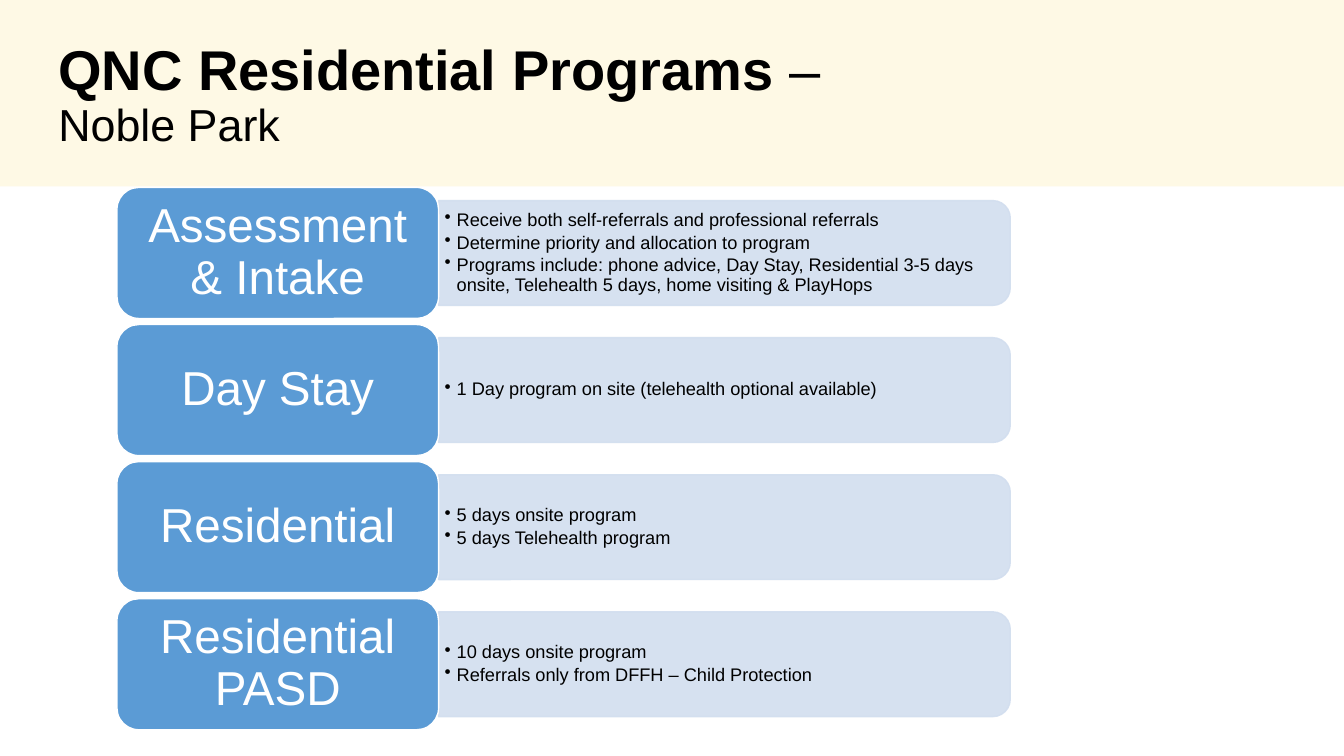
"""Build a slide listing the residential programs at Noble Park."""
from dataclasses import dataclass

from lxml import etree
from pptx import Presentation
from pptx.dml.color import RGBColor
from pptx.enum import shapes, text
from pptx.oxml import ns
from pptx.util import Inches, Pt

BLACK = RGBColor(0x00, 0x00, 0x00)
WHITE = RGBColor(0xFF, 0xFF, 0xFF)
CREAM = RGBColor(0xFE, 0xF9, 0xE5)
BLUE = RGBColor(0x5B, 0x9B, 0xD5)
PALE = RGBColor(0xD2, 0xDE, 0xEF)
FACE = "Arial"
TOP, PITCH = 1.86, 1.36
LEFT, TAB_W, TAB_H = 1.16, 3.19, 1.3
BAR_W, BAR_H = 5.67, 1.04


@dataclass
class Program:
    name: str
    notes: list[str]


PROGRAMS = [
    Program("Assessment & Intake", [
        "Receive both self-referrals and professional referrals",
        "Determine priority and allocation to program",
        "Programs include: phone advice, Day Stay, Residential 3-5 days "
        "onsite, Telehealth 5 days, home visiting & PlayHops",
    ]),
    Program("Day Stay", ["1 Day program on site (telehealth optional available)"]),
    Program("Residential", ["5 days onsite program", "5 days Telehealth program"]),
    Program("Residential PASD", [
        "10 days onsite program",
        "Referrals only from DFFH – Child Protection",
    ]),
]


def add_box(slide, kind, left: float, top: float, width: float, height: float,
            fill: RGBColor, line: RGBColor):
    box = slide.shapes.add_shape(
        kind, Inches(left), Inches(top), Inches(width), Inches(height))
    box.shadow.inherit = False
    box.fill.solid()
    box.fill.fore_color.rgb = fill
    box.line.color.rgb = line
    box.line.width = Pt(1)
    return box


def set_frame(frame, side: float, edge: float) -> None:
    frame.word_wrap = True
    frame.vertical_anchor = text.MSO_ANCHOR.MIDDLE
    frame.margin_left = frame.margin_right = Inches(side)
    frame.margin_top = frame.margin_bottom = Inches(edge)


def set_font(font, size: float, color: RGBColor) -> None:
    font.name = FACE
    font.size = Pt(size)
    font.color.rgb = color


def add_title(slide) -> None:
    box = slide.shapes.add_textbox(
        Inches(0.48), Inches(0.47), Inches(8.87), Inches(0.98))
    set_frame(box.text_frame, 0.1, 0.05)
    para = box.text_frame.paragraphs[0]
    para.line_spacing = 0.9
    set_font(para.font, 40, BLACK)
    lead = para.add_run()
    lead.text = "QNC Residential Programs "
    lead.font.bold = True
    para.add_run().text = "– "
    para.add_line_break()
    place = para.add_run()
    place.text = "Noble Park"
    place.font.size = Pt(32)


def add_bar(slide, mid: float) -> None:
    center = LEFT + TAB_W + BAR_W / 2
    bar = add_box(slide, shapes.MSO_SHAPE.ROUND_2_SAME_RECTANGLE,
                  center - BAR_H / 2, mid - BAR_W / 2, BAR_H, BAR_W, PALE, PALE)
    bar.rotation = 90
    for color in bar.element.spPr.iter(ns.qn("a:srgbClr")):
        etree.SubElement(color, ns.qn("a:alpha"), val="90000")


def add_notes(slide, notes: list[str], mid: float) -> None:
    box = slide.shapes.add_textbox(
        Inches(LEFT + TAB_W + 0.01), Inches(mid - 0.47), Inches(5.62), Inches(0.94))
    frame = box.text_frame
    set_frame(frame, 0.05, 0.03)
    for spot, note in enumerate(notes):
        para = frame.add_paragraph() if spot else frame.paragraphs[0]
        para.text = note
        props = para._p.get_or_add_pPr()
        props.set("marL", str(Inches(0.12)))
        props.set("indent", str(Inches(-0.12)))
        etree.SubElement(props, ns.qn("a:buChar"), char="•")
        para.line_spacing = 0.9
        para.space_after = Pt(2)
        set_font(para.font, 13, BLACK)


def add_tab(slide, name: str, top: float) -> None:
    tab = add_box(slide, shapes.MSO_SHAPE.ROUNDED_RECTANGLE,
                  LEFT, top, TAB_W, TAB_H, BLUE, WHITE)
    set_frame(tab.text_frame, 0.14, 0.07)
    para = tab.text_frame.paragraphs[0]
    para.text = name
    para.alignment = text.PP_ALIGN.CENTER
    para.line_spacing = 0.9
    set_font(para.font, 34, WHITE)


def main() -> None:
    deck = Presentation()
    deck.slide_width, deck.slide_height = Inches(13.33), Inches(7.5)
    slide = deck.slides.add_slide(deck.slide_layouts[6])
    band = add_box(slide, shapes.MSO_SHAPE.RECTANGLE, 0, 0, 13.33, 1.85, CREAM, CREAM)
    band.line.fill.background()
    add_title(slide)
    for row, program in enumerate(PROGRAMS):
        top = TOP + row * PITCH
        mid = top + TAB_H / 2
        add_bar(slide, mid)
        add_notes(slide, program.notes, mid)
        add_tab(slide, program.name, top)
    deck.save("out.pptx")


if __name__ == "__main__":
    main()
